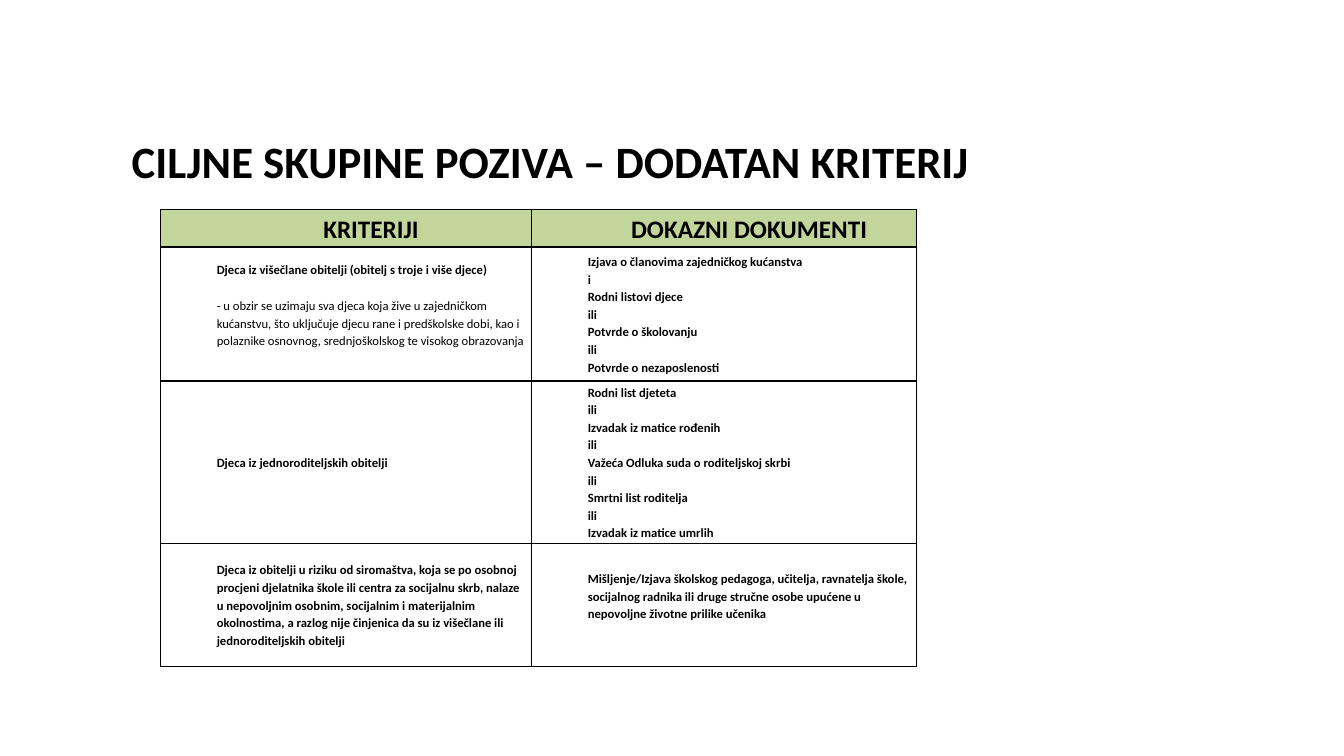
from lxml import etree
from pptx import Presentation
from pptx.dml.color import RGBColor
from pptx.enum.text import MSO_ANCHOR as ANCHOR, PP_ALIGN as ALIGN
from pptx.oxml.ns import qn
from pptx.util import Inches, Pt

# Content
TITLE = "CILJNE SKUPINE POZIVA – DODATAN KRITERIJ"
HEADERS = ["KRITERIJI", "DOKAZNI DOKUMENTI"]
# Each cell is a list of paragraphs; a leading "- " marks a plain explanatory note
ROWS = [
    (["Djeca iz višečlane obitelji (obitelj s troje i više djece)",
      "- u obzir se uzimaju sva djeca koja žive u zajedničkom kućanstvu, što "
      "uključuje djecu rane i predškolske dobi, kao i polaznike osnovnog, "
      "srednjoškolskog te visokog obrazovanja"],
     ["Izjava o članovima zajedničkog kućanstva", "i", "Rodni listovi djece", "ili",
      "Potvrde o školovanju", "ili", "Potvrde o nezaposlenosti"]),
    (["Djeca iz jednoroditeljskih obitelji"],
     ["Rodni list djeteta", "ili", "Izvadak iz matice rođenih", "ili",
      "Važeća Odluka suda o roditeljskoj skrbi", "ili", "Smrtni list roditelja",
      "ili", "Izvadak iz matice umrlih"]),
    (["Djeca iz obitelji u riziku od siromaštva, koja se po osobnoj procjeni "
      "djelatnika škole ili centra za socijalnu skrb, nalaze u nepovoljnim osobnim, "
      "socijalnim i materijalnim okolnostima, a razlog nije činjenica da su iz "
      "višečlane ili jednoroditeljskih obitelji"],
     ["Mišljenje/Izjava školskog pedagoga, učitelja, ravnatelja škole, socijalnog "
      "radnika ili druge stručne osobe upućene u nepovoljne životne prilike učenika"]),
]
COL_WIDTHS = [3.68, 3.82]
ROW_HEIGHTS = [0.37, 1.33, 1.61, 1.22]
RAISED = {(1, 0), (3, 1)}  # cells whose text sits one line higher
LINE = 0.18
BLACK, GREEN = "000000", "C2D69B"


def rgb(value):
    return RGBColor.from_string(value)


def add_run(p, text, size, bold=True):
    r = p.add_run()
    r.text = text
    r.font.name, r.font.size, r.font.bold = "Calibri", Pt(size), bold
    r.font.color.rgb = rgb(BLACK)


def add_borders(cell):
    tcPr = cell._tc.get_or_add_tcPr()
    for i, side in enumerate(("lnL", "lnR", "lnT", "lnB")):
        ln = etree.Element(qn("a:" + side), w=str(Pt(1)))
        fill = etree.SubElement(ln, qn("a:solidFill"))
        etree.SubElement(fill, qn("a:srgbClr"), val=BLACK)
        tcPr.insert(i, ln)


def fill_cell(cell, paragraphs, size, align, raised):
    cell.margin_left = cell.margin_right = Inches(0.06)
    cell.margin_top = 0
    cell.margin_bottom = Inches(LINE if raised else 0)
    tf = cell.text_frame
    for i, text in enumerate(paragraphs):
        p = tf.add_paragraph() if i else tf.paragraphs[0]
        note = text.startswith("- ")
        pPr = p._p.get_or_add_pPr()
        pPr.set("marL", str(Inches(0.5)))
        pPr.set("indent", "0")
        p.alignment, p.line_spacing = align, 1.15
        if note:
            p.space_before = Inches(LINE)
        add_run(p, text, size, not note)


prs = Presentation()
prs.slide_width, prs.slide_height = Inches(13.33), Inches(7.5)
s = prs.slides.add_slide(prs.slide_layouts[6])

# Title
sp = s.shapes.add_textbox(Inches(-0.29), Inches(0.63), Inches(11.5), Inches(1.45))
tf = sp.text_frame
tf.word_wrap = True
tf.vertical_anchor = ANCHOR.MIDDLE
tf.margin_top = Inches(0.6)
p = tf.paragraphs[0]
p.alignment, p.line_spacing = ALIGN.CENTER, 0.9
add_run(p, TITLE, 32)

# Criteria table
table = s.shapes.add_table(len(ROW_HEIGHTS), len(COL_WIDTHS), Inches(1.59), Inches(2.08),
                           Inches(sum(COL_WIDTHS)), Inches(sum(ROW_HEIGHTS))).table
table.first_row = table.horz_banding = False
for column, width in zip(table.columns, COL_WIDTHS):
    column.width = Inches(width)
for row, height in zip(table.rows, ROW_HEIGHTS):
    row.height = Inches(height)

for y, row in enumerate([[[h] for h in HEADERS]] + ROWS):
    for x, paragraphs in enumerate(row):
        cell = table.cell(y, x)
        if y == 0:
            fill_cell(cell, paragraphs, 18, ALIGN.CENTER, False)
            cell.fill.solid()
            cell.fill.fore_color.rgb = rgb(GREEN)
        else:
            fill_cell(cell, paragraphs, 9, ALIGN.LEFT, (y, x) in RAISED)
            cell.vertical_anchor = ANCHOR.MIDDLE
            cell.fill.background()
        add_borders(cell)

prs.save("out.pptx")
